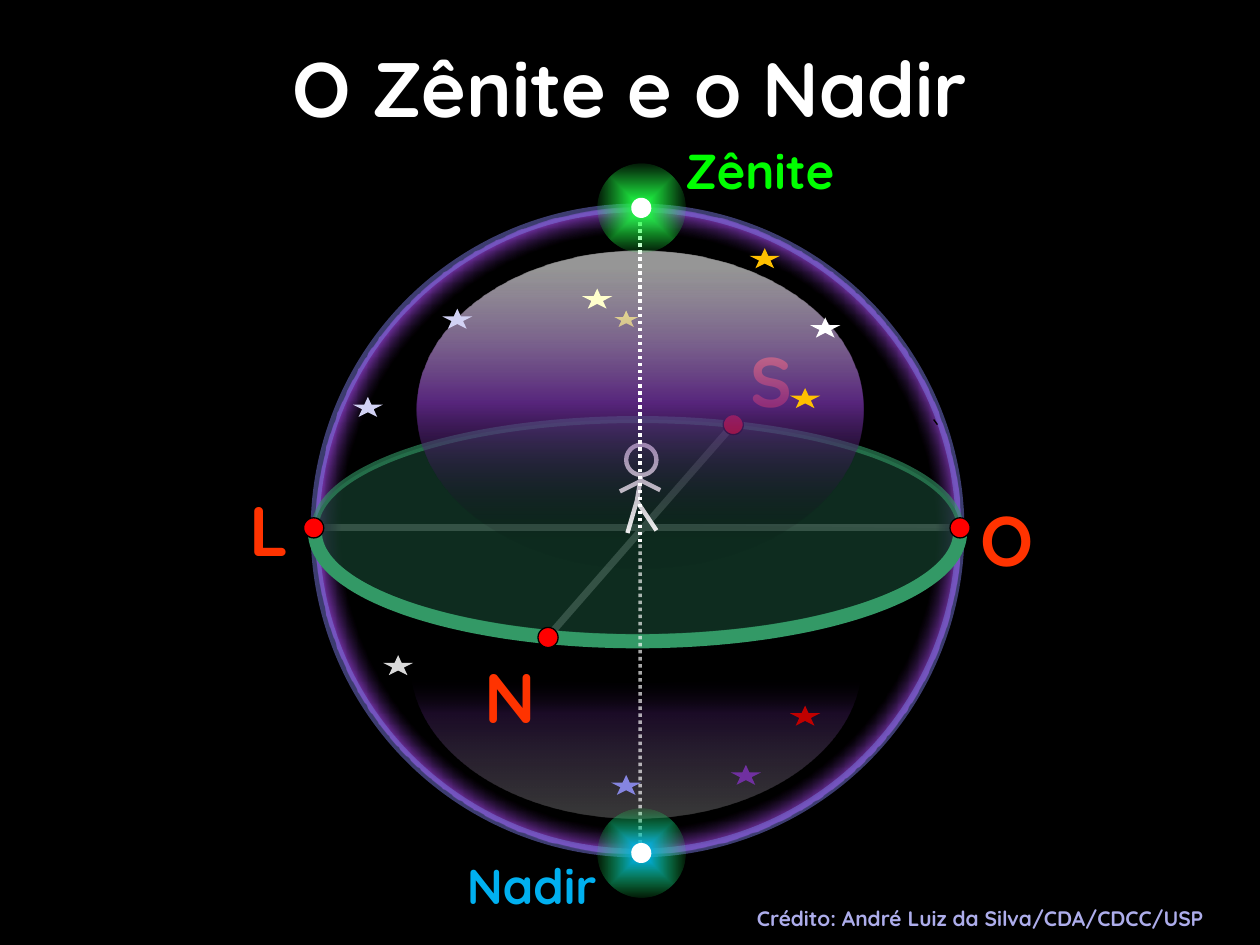
import math
from collections import namedtuple

from pptx import Presentation
from pptx import util as u
from pptx.dml.color import RGBColor
from pptx.enum import dml, shapes, text
from pptx.oxml import ns, parse_xml

Box = namedtuple("Box", "left top width height")
FONT = "Quicksand"
DOT = 0.16
GLOW = 0.7
OVAL = shapes.MSO_SHAPE.OVAL
STAR = shapes.MSO_SHAPE.STAR_5_POINT


def rgb(value):
    """Return the colour for a hex string."""
    return RGBColor.from_string(value)


def set_alpha(shape, tag, percent):
    """Make the colour under the given shape property translucent."""
    for color in shape.element.spPr.find(ns.qn(tag)).iter(ns.qn("a:srgbClr")):
        color.append(parse_xml(f'<a:alpha {ns.nsdecls("a")} val="{percent * 1000}"/>'))


def set_line(shape, color, width, alpha=100):
    """Give a shape or connector a solid line."""
    shape.line.color.rgb = rgb(color)
    shape.line.width = u.Pt(width)
    if alpha < 100:
        set_alpha(shape, "a:ln", alpha)


def set_fill(shape, color, alpha=100):
    """Give a shape a solid fill."""
    shape.fill.solid()
    shape.fill.fore_color.rgb = rgb(color)
    if alpha < 100:
        set_alpha(shape, "a:solidFill", alpha)


def set_gradient(shape, stops, angle=0, kind=None):
    """Fill a shape with a linear gradient, or from its centre if a kind is given."""
    marks = "".join(
        f'<a:gs pos="{position * 1000}"><a:srgbClr val="{color}">'
        f'<a:alpha val="{alpha * 1000}"/></a:srgbClr></a:gs>'
        for position, color, alpha in stops
    )
    direction = f'<a:lin ang="{angle * 60000}" scaled="0"/>'
    if kind:
        direction = (f'<a:path path="{kind}"><a:fillToRect l="50000" t="50000" '
                     'r="50000" b="50000"/></a:path>')
    shape.fill.background()
    properties = shape.element.spPr
    properties.replace(properties.find(ns.qn("a:noFill")), parse_xml(
        f'<a:gradFill {ns.nsdecls("a")} rotWithShape="1"><a:gsLst>{marks}</a:gsLst>'
        f"{direction}</a:gradFill>"))


def add_shape(slide, kind, box, color=None):
    """Add a preset shape without line or shadow."""
    shape = slide.shapes.add_shape(kind, *map(u.Inches, box))
    shape.shadow.inherit = False
    shape.line.fill.background()
    if color:
        set_fill(shape, color)
    else:
        shape.fill.background()
    return shape


def add_line(slide, start, end, width, color="FFFFFF", alpha=100):
    """Add a straight line without shadow."""
    line = slide.shapes.add_connector(
        shapes.MSO_CONNECTOR.STRAIGHT, *map(u.Inches, (*start, *end)))
    set_line(line, color, width, alpha)
    line.element.spPr.append(parse_xml(f'<a:effectLst {ns.nsdecls("a")}/>'))
    return line


def add_text(slide, box, words, size, color, align=text.PP_ALIGN.LEFT,
             anchor=text.MSO_ANCHOR.TOP):
    """Add a text box with one bold run."""
    frame = slide.shapes.add_textbox(*map(u.Inches, box)).text_frame
    frame.word_wrap = True
    frame.vertical_anchor = anchor
    paragraph = frame.paragraphs[0]
    paragraph.alignment = align
    run = paragraph.add_run()
    run.text = words
    run.font.name = FONT
    run.font.size = u.Pt(size)
    run.font.bold = True
    run.font.color.rgb = rgb(color)


def centred(x, y, size):
    """Return the square box around a point."""
    return Box(x - size / 2, y - size / 2, size, size)


def add_globe(slide, box):
    """Draw the lower sky, the horizon axes and the celestial sphere."""
    moon = add_shape(slide, shapes.MSO_SHAPE.MOON,
                     Box(box.left + 1.93, box.top + 2.44, 1.23, 3.58))
    moon.adjustments[0] = 0.875
    moon.rotation = 270
    set_gradient(moon, [(3, "FFFFFF", 37), (68, "7030A0", 41), (94, "000000", 0)])
    middle = box.top + 2.54
    add_line(slide, (box.left + 1.8, box.top + 3.46), (box.left + 3.32, box.top + 1.72), 4)
    add_line(slide, (box.left, middle), (box.left + box.width, middle), 4)
    sphere = add_shape(slide, OVAL, box)
    set_gradient(sphere, [(65, "000000", 40), (70, "7030A0", 100)], kind="circle")
    set_line(sphere, "7878DE", 5, 50)


def add_cardinal_labels(slide, box):
    """Name the four cardinal points around the horizon."""
    for letter, x, y in (("L", -0.62, 2.16), ("S", 3.36, 0.98),
                         ("O", 5.18, 2.24), ("N", 1.25, 3.49)):
        add_text(slide, Box(box.left + x, box.top + y, 0.39, 0.77), letter, 40, "FF3300")


def add_horizon(slide, box):
    """Draw the horizon disc with its thicker front rim."""
    disc = add_shape(slide, OVAL, box)
    set_fill(disc, "143C2B", 73)
    set_line(disc, "339966", 4, 60)
    add_line(slide, (box.left + 4.94, box.top + 0.04),
             (box.left + 4.91, box.top), 0.75, "000000")
    radius_x, radius_y = box.width / 2, box.height / 2
    points = [
        (u.Inches(box.left + radius_x * (1 + math.cos(math.radians(angle)))),
         u.Inches(box.top + 0.03 + radius_y * (1 + math.sin(math.radians(angle)))))
        for angle in range(-2, 187, 2)
    ]
    builder = slide.shapes.build_freeform(*points[0])
    builder.add_line_segments(points[1:], close=False)
    rim = builder.convert_to_shape()
    rim.shadow.inherit = False
    set_fill(rim, "143C2B", 7)
    set_line(rim, "339966", 8)


def add_observer(slide, box):
    """Draw the stick figure standing at the centre."""
    head = add_shape(slide, OVAL, Box(box.left + 0.05, box.top, 0.24, 0.24))
    set_line(head, "FFFFFF", 2.5)
    limbs = (((0.17, 0.24), (0.13, 0.47)), ((0.13, 0.44), (0.29, 0.68)),
             ((0.13, 0.46), (0.06, 0.7)), ((0.16, 0.28), (0.32, 0.36)),
             ((0, 0.37), (0.16, 0.29)))
    for limb in limbs:
        start, end = ((box.left + x, box.top + y) for x, y in limb)
        add_line(slide, start, end, 2.5)


def add_cardinal_dots(slide, box):
    """Mark the four cardinal points on the horizon."""
    for x, y in ((-0.01, 2.54), (3.32, 1.72), (1.85, 3.41), (5.12, 2.54)):
        dot = add_shape(slide, OVAL, centred(box.left + x, box.top + y, DOT), "FF0000")
        set_line(dot, "000000", 0.75)


def add_star(slide, left, top, color):
    """Add one star of the common size."""
    return add_shape(slide, STAR, Box(left, top, 0.24, 0.16), color)


def add_stars(slide, box):
    """Scatter the stars over the sphere."""
    stars = ((0.3, 1.5, "D2D2F4"), (1.01, 0.8, "D2D2F4"), (3.77, 1.43, "FFC000"),
             (3.45, 0.32, "FFC000"), (3.93, 0.87, "FFFFFF"), (2.12, 0.64, "FFFFCC"),
             (3.3, 4.42, "7030A0"), (3.77, 3.95, "C00000"), (2.35, 4.5, "8585E0"),
             (0.54, 3.55, "D9D9D9"))
    for x, y, color in stars:
        add_star(slide, box.left + x, box.top + y, color)


def add_pole(slide, x, y, color):
    """Draw a glowing pole of the vertical axis."""
    glow = add_shape(slide, OVAL, centred(x, y, GLOW))
    set_gradient(glow, [(7, color, 100), (77, "21FF46", 2)], kind="shape")
    point = add_shape(slide, OVAL, centred(x, y, DOT), "FFFFFF")
    glow.rotation = point.rotation = 305.7


def add_axis_part(slide, x, top, bottom, alpha=100):
    """Draw a dotted half of the vertical axis."""
    line = add_line(slide, (x, top), (x, bottom), 2, alpha=alpha)
    line.line.dash_style = dml.MSO_LINE.ROUND_DOT


def add_vertical(slide, box):
    """Draw the vertical with the zenith, the nadir and their names."""
    x = box.left + 2.58
    middle = box.top + 2.67
    center = text.PP_ALIGN.CENTER
    add_axis_part(slide, x, box.top, middle)
    add_pole(slide, x + 0.01, box.top, "21FF46")
    add_text(slide, Box(x + 0.09, box.top - 0.58, 1.72, 0.57), "Zênite", 28, "00FF00", center)
    add_axis_part(slide, x, middle, box.top + 5.19, 65)
    add_text(slide, Box(x - 1.72, box.top + 5.09, 1.72, 0.57), "Nadir", 28, "00B0F0", center)
    add_pole(slide, x + 0.01, box.top + 5.12, "00B0F0")


def main():
    """Build the slide and save it."""
    presentation = Presentation()
    presentation.slide_width, presentation.slide_height = u.Inches(10), u.Inches(7.5)
    slide = presentation.slides.add_slide(presentation.slide_layouts[6])
    slide.background.fill.solid()
    slide.background.fill.fore_color.rgb = rgb("000000")
    sphere = Box(2.5, 1.65, 5.12, 5.12)
    add_text(slide, Box(0.75, 0.06, 8.5, 1.25), "O Zênite e o Nadir", 44, "FFFFFF",
             text.PP_ALIGN.CENTER, text.MSO_ANCHOR.MIDDLE)
    add_globe(slide, sphere)
    add_cardinal_labels(slide, sphere)
    add_horizon(slide, Box(2.5, 3.33, 5.12, 1.73))
    set_line(add_star(slide, 4.85, 2.45, "FFFF00"), "000000", 0.75)
    add_observer(slide, Box(4.92, 3.53, 0.32, 0.7))
    add_cardinal_dots(slide, sphere)
    dome = add_shape(slide, OVAL, Box(3.31, 1.99, 3.54, 2.52))
    set_gradient(dome, [(6, "FFFFFF", 58), (48, "7030A0", 77), (91, "000000", 2)], 90)
    add_stars(slide, sphere)
    add_text(slide, Box(5.91, 7.14, 4.06, 0.3),
             "Crédito: André Luiz da Silva/CDA/CDCC/USP", 12, "ADADEB")
    add_vertical(slide, sphere)
    presentation.save("out.pptx")


if __name__ == "__main__":
    main()
